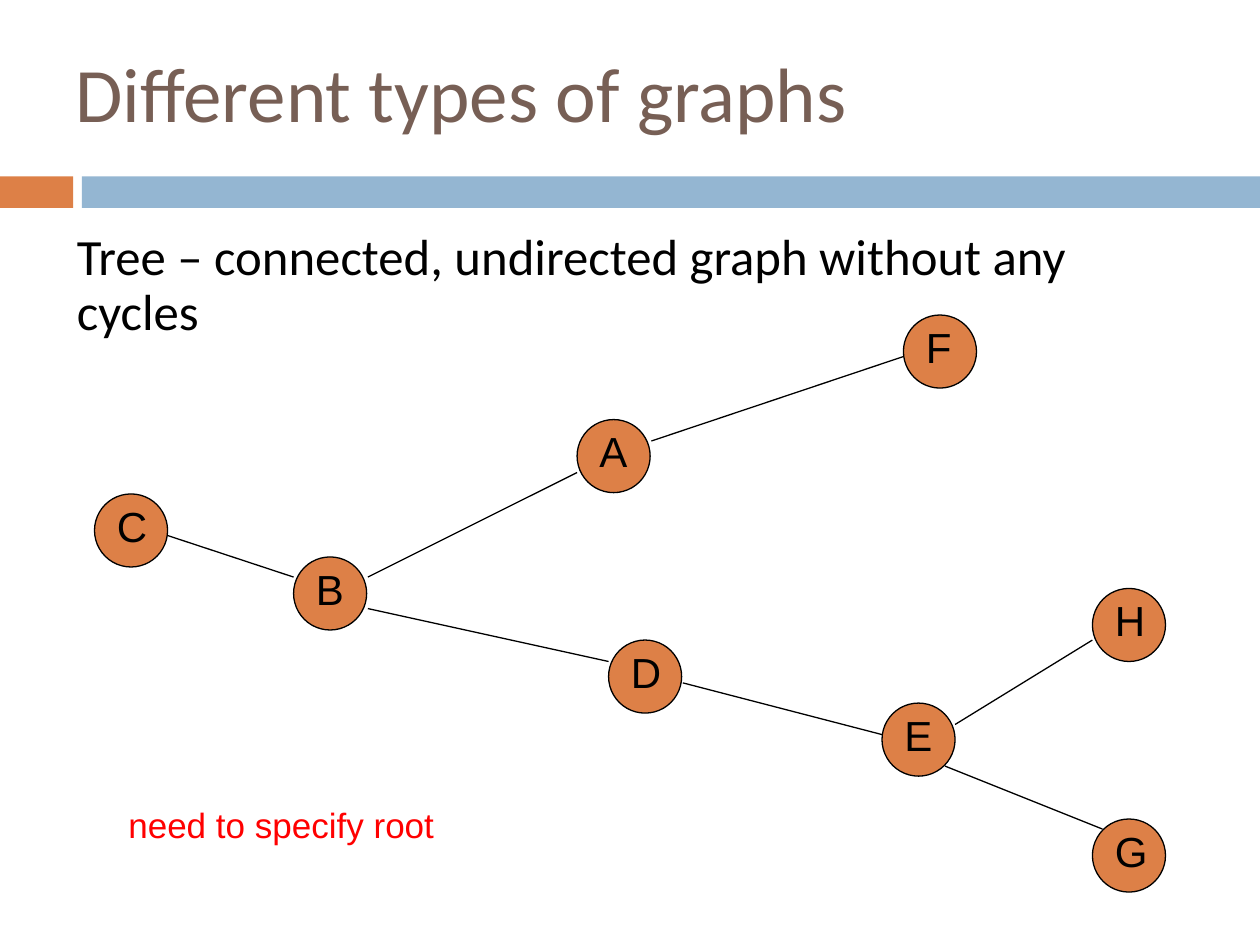
from lxml.etree import SubElement
from pptx import Presentation
from pptx.dml.color import RGBColor
from pptx.enum.shapes import MSO_CONNECTOR, MSO_SHAPE
from pptx.enum.text import MSO_ANCHOR, MSO_AUTO_SIZE, PP_ALIGN
from pptx.oxml.ns import qn
from pptx.util import Inches, Pt

ORANGE = RGBColor(0xDD, 0x80, 0x47)
BLUE = RGBColor(0x94, 0xB6, 0xD2)
BROWN = RGBColor(0x77, 0x5F, 0x55)
BLACK = RGBColor(0, 0, 0)
RED = RGBColor(0xFF, 0, 0)

TITLE = "Different types of graphs"
DEFINITION = "Tree – connected, undirected graph without any cycles"
ROOT_NOTE = "need to specify root"
BANDS = [((0, 1.4, 0.58, 0.25), ORANGE), ((0.65, 1.4, 9.35, 0.25), BLUE)]
NODES = {
    "A": (4.58, 3.33),
    "B": (2.33, 4.42),
    "C": (0.75, 3.92),
    "E": (7, 5.58),
    "D": (4.83, 5.08),
    "F": (7.17, 2.5),
    "G": (8.67, 6.5),
    "H": (8.67, 4.67),
}
EDGES = [
    ((2.92, 4.58), (4.58, 3.75)),
    ((2.92, 4.83), (4.83, 5.25)),
    ((7.17, 2.83), (5.17, 3.5)),
    ((5.42, 5.42), (7, 5.83)),
    ((7.58, 5.75), (8.67, 5.08)),
    ((7.5, 6.08), (8.75, 6.58)),
    ((1.33, 4.25), (2.33, 4.58)),
]
NODE_SIZE = 0.58
LABEL_SIZE = 0.5
LABEL_SHIFT = 0.08


def inches(values):
    return [Inches(value) for value in values]


def write(shape, text, font_name, size, color):
    shape.text_frame.text = text
    paragraph = shape.text_frame.paragraphs[0]
    paragraph.alignment = PP_ALIGN.LEFT
    paragraph.font.name = font_name
    paragraph.font.size = Pt(size)
    paragraph.font.color.rgb = color
    return paragraph


def place(shape, box):
    shape.left, shape.top, shape.width, shape.height = inches(box)


def add_filled(shapes, preset, box, color):
    shape = shapes.add_shape(preset, *inches(box))
    shape.shadow.inherit = False
    shape.fill.solid()
    shape.fill.fore_color.rgb = color
    shape.line.fill.background()
    return shape


def add_label(shapes, box, text, size, color):
    label = shapes.add_textbox(*inches(box))
    label.text_frame.word_wrap = True
    write(label, text, "Arial", size, color)


def outline(shape):
    shape.line.color.rgb = BLACK
    shape.line.width = Pt(0.75)


def add_node(slide, name, left, top):
    shapes = slide.shapes.add_group_shape().shapes
    circle = add_filled(shapes, MSO_SHAPE.OVAL, (left, top, NODE_SIZE, NODE_SIZE), ORANGE)
    outline(circle)
    add_label(shapes, (left + LABEL_SHIFT, top, LABEL_SIZE, LABEL_SIZE), name, 24, BLACK)


def add_edge(slide, start, end):
    edge = slide.shapes.add_connector(MSO_CONNECTOR.STRAIGHT, *inches(start + end))
    outline(edge)
    SubElement(edge._element.spPr, qn("a:effectLst"))


def main():
    prs = Presentation()
    prs.slide_width, prs.slide_height = Inches(10), Inches(7.5)
    slide = prs.slides.add_slide(prs.slide_layouts[1])

    for box, color in BANDS:
        add_filled(slide.shapes, MSO_SHAPE.RECTANGLE, box, color)

    title = slide.shapes.title
    place(title, (0.5, 0.13, 8.25, 1.2))
    title.text_frame.vertical_anchor = MSO_ANCHOR.MIDDLE
    write(title, TITLE, "Calibri", 44, BROWN)

    definition = slide.placeholders[1]
    place(definition, (0.51, 1.79, 9, 1.08))
    definition.text_frame.auto_size = MSO_AUTO_SIZE.NONE
    sentence = write(definition, DEFINITION, "Calibri", 29, BLACK)
    sentence.line_spacing = 0.9
    sentence.space_before = Pt(7)
    properties = sentence._p.get_or_add_pPr()
    properties.set("marL", "0")
    properties.set("indent", "0")
    bullet = properties.makeelement(qn("a:buNone"), {})
    properties.insert_element_before(bullet, "a:tabLst", "a:defRPr", "a:extLst")

    for name, (left, top) in NODES.items():
        add_node(slide, name, left, top)
    for start, end in EDGES:
        add_edge(slide, start, end)
    add_label(slide.shapes, (0.92, 6.33, 2.92, 0.43), ROOT_NOTE, 20, RED)

    prs.save("out.pptx")


if __name__ == "__main__":
    main()
